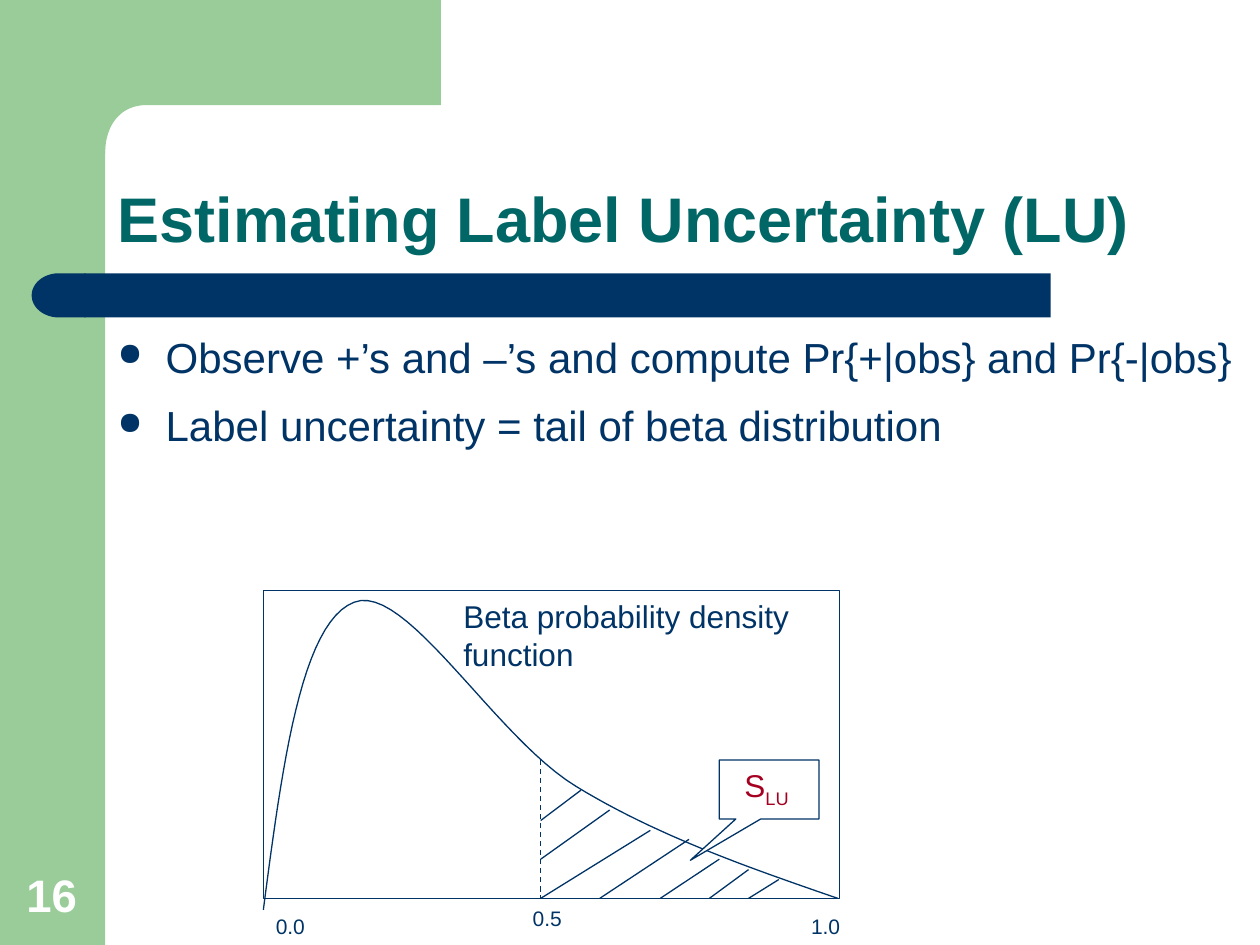
from dataclasses import dataclass

from lxml import etree
from pptx import Presentation
from pptx.dml.color import RGBColor
from pptx.enum.dml import MSO_LINE
from pptx.enum.shapes import MSO_CONNECTOR, MSO_SHAPE
from pptx.enum.text import MSO_ANCHOR, MSO_AUTO_SIZE, PP_ALIGN
from pptx.oxml.ns import qn
from pptx.util import Cm, Pt


@dataclass(frozen=True)
class Theme:
    font: str = "Arial"
    navy: RGBColor = RGBColor(0x00, 0x33, 0x66)
    teal: RGBColor = RGBColor(0x00, 0x66, 0x66)
    green: RGBColor = RGBColor(0x99, 0xCC, 0x99)
    red: RGBColor = RGBColor(0xA5, 0x00, 0x21)
    white: RGBColor = RGBColor(0xFF, 0xFF, 0xFF)
    title_size: Pt = Pt(36)
    number_size: Pt = Pt(26)
    body_size: Pt = Pt(24)
    note_size: Pt = Pt(18)
    tick_size: Pt = Pt(12)
    line_width: Pt = Pt(0.75)


THEME = Theme()
BULLETS = (
    "Observe +’s and –’s and compute Pr{+|obs} and Pr{-|obs}",
    "Label uncertainty = tail of beta distribution",
)
AXIS_Y = 18.11
THRESHOLD_X = 10.9
DENSITY_CURVES = (
    ((5.31, 18.34), (5.69, 15.44), (6.07, 12.55), (7.14, 12.14)),
    ((7.14, 12.14), (8.18, 11.73), (9.98, 14.86), (11.61, 15.85)),
    ((11.61, 15.85), (13.23, 16.84), (15.06, 17.48), (16.89, AXIS_Y)),
)
HATCHING = (
    ((11.71, 15.93), (THRESHOLD_X, 16.54)),
    ((12.29, 16.33), (THRESHOLD_X, 17.32)),
    ((13.11, 16.74), (THRESHOLD_X, AXIS_Y)),
    ((13.89, 16.92), (12.09, AXIS_Y)),
    ((14.5, 17.32), (13.31, AXIS_Y)),
    ((15.09, 17.53), (14.3, AXIS_Y)),
    ((15.7, 17.73), (15.09, AXIS_Y)),
)
TICKS = (("0.5", 10.49, 18.14), ("0.0", 5.31, 18.29), ("1.0", 16.1, 18.29))


def set_values(target, values):
    for name, value in values.items():
        setattr(target, name, value)


def add_span(para, text, size, color, bold=False):
    span = para.add_run()
    span.text = text
    set_values(span.font, {"name": THEME.font, "size": size, "bold": bold})
    span.font.color.rgb = color
    return span


def paint(shape, fill=None, outlined=False):
    shape.shadow.inherit = False
    if fill is None:
        shape.fill.background()
    else:
        shape.fill.solid()
        shape.fill.fore_color.rgb = fill
    if outlined:
        shape.line.color.rgb = THEME.navy
        shape.line.width = THEME.line_width
    else:
        shape.line.fill.background()


def add_block(page, kind, bounds, fill=None, outlined=False):
    block = page.shapes.add_shape(kind, *map(Cm, bounds))
    paint(block, fill, outlined)
    return block


def add_outline(page, points, closed, **look):
    start, *rest = [(Cm(x), Cm(y)) for x, y in points]
    builder = page.shapes.build_freeform(*start)
    builder.add_line_segments(rest, close=closed)
    paint(builder.convert_to_shape(), **look)


def add_line(page, start, end, dash=None):
    line = page.shapes.add_connector(
        MSO_CONNECTOR.STRAIGHT, *map(Cm, (*start, *end)))
    line.line.color.rgb = THEME.navy
    set_values(line.line, {"width": THEME.line_width, "dash_style": dash})
    etree.SubElement(line._element.spPr, qn("a:effectLst"))


def add_text_box(page, bounds, **frame_format):
    box = page.shapes.add_textbox(*map(Cm, bounds))
    set_values(box.text_frame, {"word_wrap": True, **frame_format})
    return box.text_frame


def bezier_points(curve, steps=24):
    """Sample a cubic Bézier curve, both ends included."""
    points = []
    for step in range(steps + 1):
        t = step / steps
        weights = ((1 - t) ** 3, 3 * t * (1 - t) ** 2, 3 * t ** 2 * (1 - t), t ** 3)
        points.append(tuple(
            sum(weight * value for weight, value in zip(weights, axis))
            for axis in zip(*curve)))
    return points


def add_bullet(para):
    properties = para._p.get_or_add_pPr()
    properties.set("marL", str(Cm(0.97)))
    properties.set("indent", str(-Cm(0.97)))
    color = etree.SubElement(properties, qn("a:buClr"))
    etree.SubElement(color, qn("a:srgbClr")).set("val", str(THEME.navy))
    etree.SubElement(properties, qn("a:buSzPct")).set("val", "75000")
    etree.SubElement(properties, qn("a:buChar")).set("char", "●")


def add_decoration(page):
    add_block(page, MSO_SHAPE.RECTANGLE, (0, 0, 2.12, 19.05), THEME.green)
    corner = bezier_points(((2.95, 2.12), (2.45, 2.12), (2.12, 2.5), (2.12, 3.1)))
    outline = [(8.89, 0), (8.89, 2.12), *corner, (1.27, 3.1), (1.27, 0)]
    add_outline(page, outline, closed=True, fill=THEME.green)
    add_block(page, MSO_SHAPE.RECTANGLE, (1.7, 5.51, 19.48, 0.89), THEME.navy)
    cap = add_block(page, MSO_SHAPE.FLOWCHART_DELAY, (0.64, 5.51, 1.09, 0.89), THEME.navy)
    cap._element.spPr.find(qn("a:xfrm")).set("flipH", "1")
    frame = add_text_box(page, (0.23, 17.35, 1.63, 1.35), vertical_anchor=MSO_ANCHOR.BOTTOM)
    frame.paragraphs[0].alignment = PP_ALIGN.CENTER
    add_span(frame.paragraphs[0], "16", THEME.number_size, THEME.white, bold=True)


def format_title(page):
    title = page.shapes.title
    set_values(title, {"left": Cm(2.12), "top": Cm(2.12),
                       "width": Cm(22.01), "height": Cm(3.18)})
    set_values(title.text_frame, {
        "vertical_anchor": MSO_ANCHOR.BOTTOM, "word_wrap": True,
        "auto_size": MSO_AUTO_SIZE.NONE})
    para = title.text_frame.paragraphs[0]
    set_values(para, {"alignment": PP_ALIGN.LEFT, "line_spacing": 0.9})
    add_span(para, "Estimating Label Uncertainty (LU)",
             THEME.title_size, THEME.teal, bold=True)


def add_body(page):
    frame = add_text_box(page, (2.12, 6.55, 23.28, 10.21))
    for index, text in enumerate(BULLETS):
        para = frame.add_paragraph() if index else frame.paragraphs[0]
        para.space_before = Pt(10.5)
        add_bullet(para)
        add_span(para, text, THEME.body_size, THEME.navy)


def add_callout(page):
    callout = add_block(page, MSO_SHAPE.RECTANGULAR_CALLOUT,
                        (14.5, 15.32, 2.01, 1.19), THEME.white, outlined=True)
    callout.adjustments[0] = -0.79
    callout.adjustments[1] = 1.2
    callout.text_frame.vertical_anchor = MSO_ANCHOR.TOP
    para = callout.text_frame.paragraphs[0]
    para.alignment = PP_ALIGN.CENTER
    add_span(para, "S", THEME.note_size, THEME.red)
    subscript = add_span(para, "LU ", THEME.note_size, THEME.red)
    subscript.font._element.set("baseline", "-25000")


def add_density_plot(page):
    add_block(page, MSO_SHAPE.RECTANGLE, (5.31, 11.91, 11.61, 6.2), outlined=True)
    density = [point for curve in DENSITY_CURVES for point in bezier_points(curve)]
    add_outline(page, density, closed=False, outlined=True)
    add_line(page, (THRESHOLD_X, 15.32), (THRESHOLD_X, AXIS_Y), MSO_LINE.DASH)
    for start, end in HATCHING:
        add_line(page, start, end)
    add_callout(page)
    for text, left, top in TICKS:
        frame = add_text_box(page, (left, top, 1.4, 0.76))
        add_span(frame.paragraphs[0], text, THEME.tick_size, THEME.navy)
    frame = add_text_box(page, (9.09, 11.91, 9.4, 1.27))
    add_span(frame.paragraphs[0], "Beta probability density function",
             THEME.note_size, THEME.navy)


def main():
    deck = Presentation()
    set_values(deck, {"slide_width": Cm(25.4), "slide_height": Cm(19.05)})
    page = deck.slides.add_slide(deck.slide_layouts[5])
    add_decoration(page)
    format_title(page)
    add_body(page)
    add_density_plot(page)
    deck.save("out.pptx")


if __name__ == "__main__":
    main()
